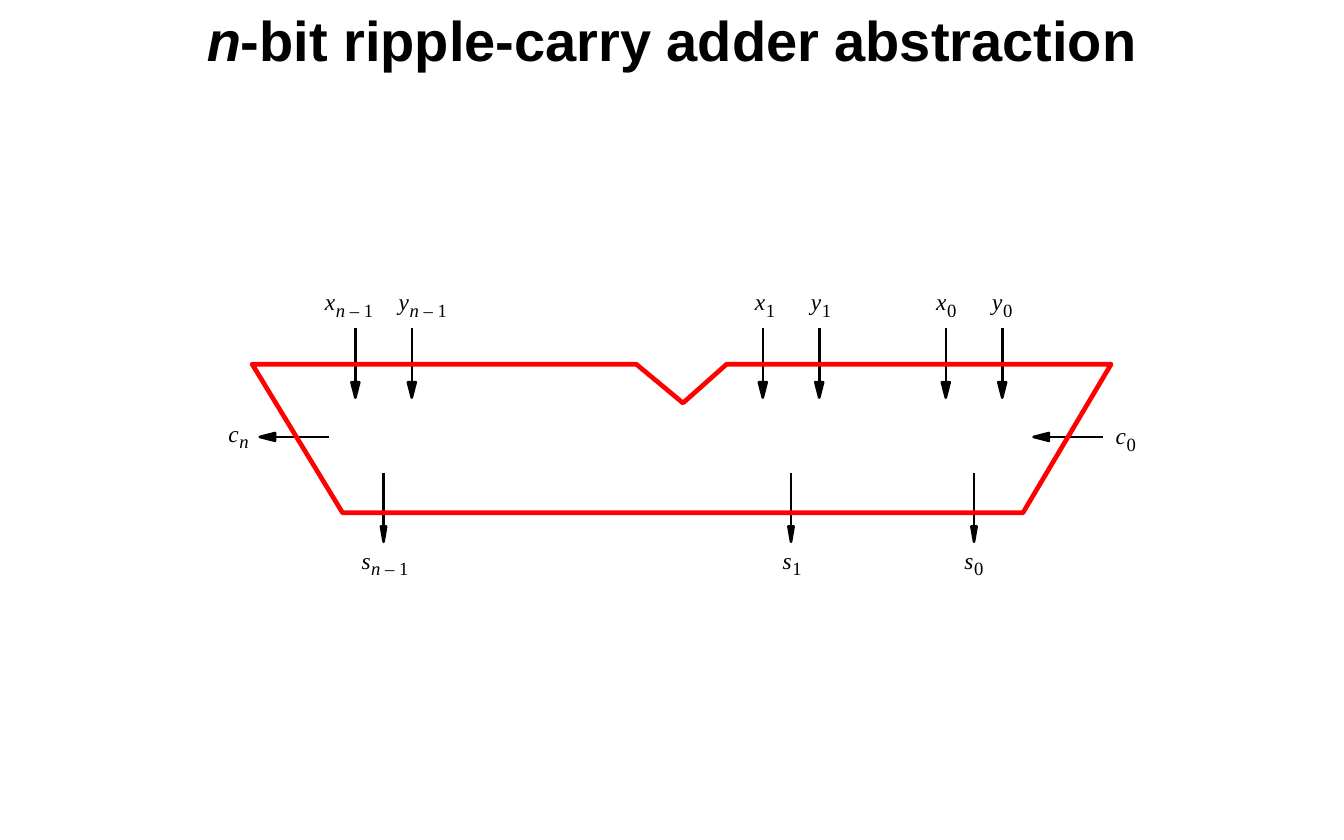
"""Build the n-bit ripple-carry adder abstraction slide."""
from dataclasses import dataclass
from itertools import groupby
from math import hypot

from lxml.etree import SubElement
from pptx import Presentation
from pptx.dml.color import RGBColor
from pptx.enum.shapes import MSO_CONNECTOR
from pptx.enum.text import MSO_ANCHOR, MSO_AUTO_SIZE, PP_ALIGN
from pptx.oxml.ns import qn
from pptx.util import Cm, Pt


@dataclass(frozen=True)
class Theme:
    ink: RGBColor = RGBColor(0, 0, 0)
    outline: RGBColor = RGBColor(255, 0, 0)
    title_font: str = "Arial"
    label_font: str = "Times New Roman"
    title_size: Pt = Pt(36)
    symbol_size: Pt = Pt(15)
    index_size: Pt = Pt(12)
    arrow_width: Pt = Pt(1.63)
    outline_width: Pt = Pt(3)


theme = Theme()

prs = Presentation()
prs.slide_width, prs.slide_height = Cm(30.48), Cm(19.05)
s = prs.slides.add_slide(prs.slide_layouts[5])


def add_arrow(x1, y1, x2, y2, head_width=0.18, head_length=0.35):
    length = hypot(x2 - x1, y2 - y1)
    ux, uy = (x2 - x1) / length, (y2 - y1) / length
    bx, by = x2 - ux * head_length, y2 - uy * head_length
    wx, wy = uy * head_width / 2, ux * head_width / 2
    line = s.shapes.add_connector(MSO_CONNECTOR.STRAIGHT, Cm(x1), Cm(y1), Cm(bx), Cm(by))
    SubElement(line._element.spPr, qn("a:effectLst"))
    builder = s.shapes.build_freeform(Cm(bx - wx), Cm(by - wy))
    builder.add_line_segments([(Cm(x2), Cm(y2)), (Cm(bx + wx), Cm(by + wy))], close=True)
    head = builder.convert_to_shape()
    head.shadow.inherit = False
    head.fill.solid()
    head.fill.fore_color.rgb = theme.ink
    for sp in (line, head):
        sp.line.color.rgb = theme.ink
        sp.line.width = theme.arrow_width


def add_label(x, y, symbol, index):
    index_dx = 0.22 if symbol == "s" else 0.25
    parts = ((symbol, 0, 0, theme.symbol_size), (index, index_dx, 0.26, theme.index_size))
    for text, dx, dy, size in parts:
        sp = s.shapes.add_textbox(Cm(x + dx), Cm(y + dy), Cm(0.2 + 0.17 * len(text)), Cm(0.5))
        tf = sp.text_frame
        tf.word_wrap = True
        tf.margin_left = tf.margin_right = tf.margin_top = tf.margin_bottom = 0
        p = tf.paragraphs[0]
        p.font.name, p.font.size = theme.label_font, size
        p.font.color.rgb = theme.ink
        for is_letter, chars in groupby(text, str.isalpha):
            r = p.add_run()
            r.text = "".join(chars)
            r.font.italic = is_letter


title = s.shapes.title
title.left, title.top, title.width, title.height = Cm(2.54), 0, Cm(25.4), Cm(2.34)
tf = title.text_frame
tf.auto_size = MSO_AUTO_SIZE.NONE
tf.vertical_anchor = MSO_ANCHOR.TOP
p = tf.paragraphs[0]
p.alignment = PP_ALIGN.CENTER
p.font.name, p.font.size, p.font.bold = theme.title_font, theme.title_size, True
p.font.color.rgb = theme.ink
for text, italic in (("n", True), ("-bit ripple-carry adder abstraction", False)):
    r = p.add_run()
    r.text = text
    r.font.italic = italic

input_gap = 1.28
stages = [
    ("n – 1", 8.06, (7.37, 9.04, 8.2)),
    ("1", 17.3, (17.12, 18.39, 17.75)),
    ("0", 21.45, (21.23, 22.5, 21.87)),
]
for index, x, label_lefts in stages:
    add_arrow(x, 7.44, x, 9.02)
    add_arrow(x + input_gap, 7.44, x + input_gap, 9.02)
    add_arrow(x + input_gap / 2, 10.72, x + input_gap / 2, 12.29, head_width=0.12)
    for symbol, left, top in zip("xys", label_lefts, (6.52, 6.52, 12.38)):
        add_label(left, top, symbol, index)

carries = [("n", 7.47, 5.18, 9.5), ("0", 25.02, 25.3, 9.55)]
for index, x, label_left, label_top in carries:
    add_arrow(x, 9.91, x - 1.58, 9.91)
    add_label(label_left, label_top, "c", index)

corners = [(7.77, 11.63), (23.2, 11.63), (25.2, 8.26), (16.48, 8.26),
           (15.49, 9.14), (14.43, 8.26), (5.72, 8.26)]
points = [(Cm(x), Cm(y)) for x, y in corners]
builder = s.shapes.build_freeform(*points[0])
builder.add_line_segments(points[1:], close=True)
adder = builder.convert_to_shape()
adder.shadow.inherit = False
adder.fill.background()
adder.line.color.rgb = theme.outline
adder.line.width = theme.outline_width

prs.save("out.pptx")
